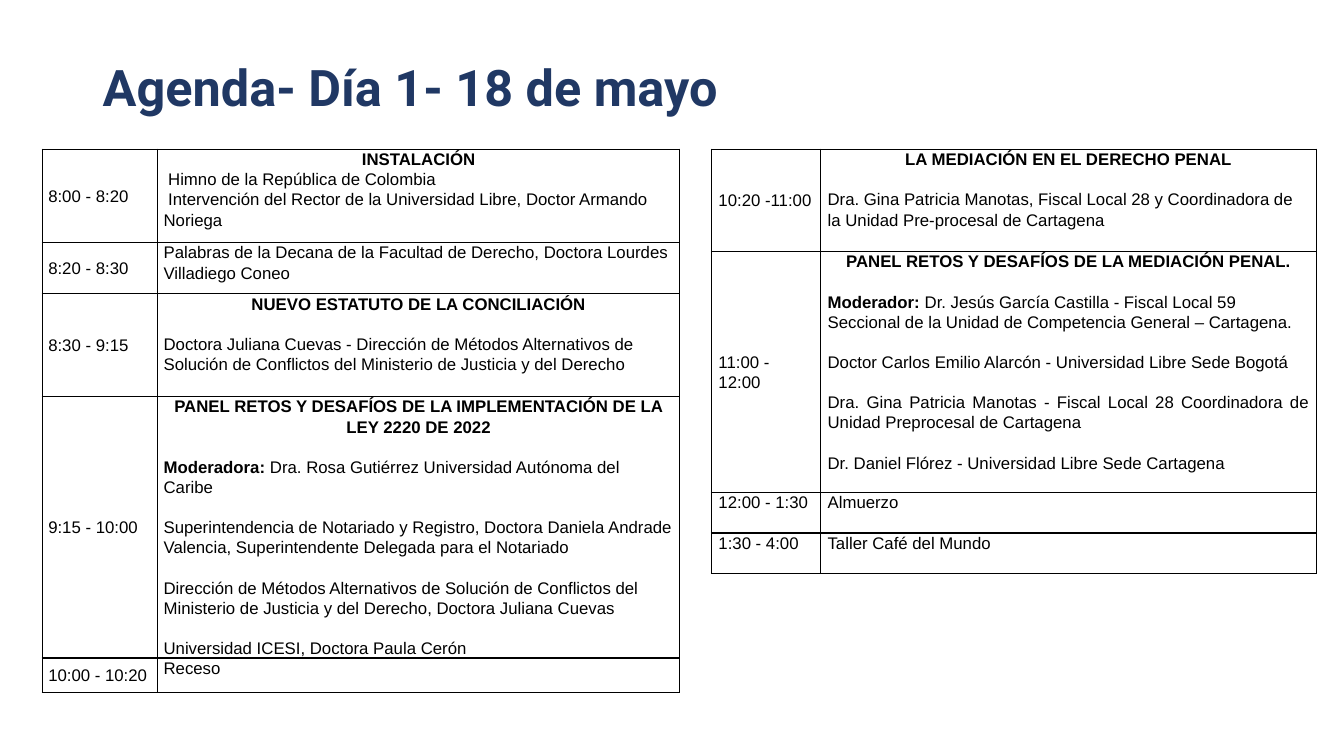
"""Build the agenda slide for day 1, with two timetables side by side."""
from lxml.etree import SubElement
from pptx import Presentation
from pptx.dml.color import RGBColor
from pptx.enum.text import MSO_AUTO_SIZE as AutoSize, MSO_ANCHOR as Anchor, PP_ALIGN as Align
from pptx.oxml.ns import qn
from pptx.util import Pt

THEME = {
    "title": {"name": "Roboto", "size": Pt(36), "bold": True, "color": RGBColor(0x20, 0x38, 0x64)},
    "body": {"name": "Arial", "size": Pt(12), "bold": False, "color": RGBColor(0, 0, 0)},
    "strong": {"name": "Arial", "size": Pt(12), "bold": True, "color": RGBColor(0, 0, 0)},
    "border": "000000",
}
LINE_GAP = Pt(14.4)
STYLES = {
    "heading": {"alignment": Align.CENTER},
    "line": {"alignment": Align.LEFT},
    "spaced": {"alignment": Align.LEFT, "space_before": LINE_GAP},
    "justified": {"alignment": Align.JUSTIFY, "space_before": LINE_GAP},
    "indented": {"alignment": Align.LEFT},
}
TABLES = [
    {
        "left": 30.2, "columns": [82.4, 373], "inset": 4.3,
        "rows": [
            (66.6, Anchor.MIDDLE, "8:00 - 8:20", [
                ("heading", "INSTALACIÓN", ""),
                ("indented", "", "Himno de la República de Colombia"),
                ("indented", "", "Intervención del Rector de la Universidad Libre, Doctor Armando Noriega"),
            ]),
            (36.8, Anchor.MIDDLE, "8:20 - 8:30", [
                ("line", "", "Palabras de la Decana de la Facultad de Derecho, Doctora Lourdes Villadiego Coneo"),
            ]),
            (73.2, Anchor.MIDDLE, "8:30 - 9:15", [
                ("heading", "NUEVO ESTATUTO DE LA CONCILIACIÓN", ""),
                ("spaced", "", "Doctora Juliana Cuevas - Dirección de Métodos Alternativos de "
                 "Solución de Conflictos del Ministerio de Justicia y del Derecho"),
            ]),
            (187, Anchor.MIDDLE, "9:15 - 10:00", [
                ("heading", "PANEL RETOS Y DESAFÍOS DE LA IMPLEMENTACIÓN DE LA LEY 2220 DE 2022", ""),
                ("spaced", "Moderadora:", " Dra. Rosa Gutiérrez Universidad Autónoma del Caribe"),
                ("spaced", "", "Superintendencia de Notariado y Registro, Doctora Daniela Andrade "
                 "Valencia, Superintendente Delegada para el Notariado"),
                ("spaced", "", "Dirección de Métodos Alternativos de Solución de Conflictos del "
                 "Ministerio de Justicia y del Derecho, Doctora Juliana Cuevas"),
                ("spaced", "", "Universidad ICESI, Doctora Paula Cerón"),
            ]),
            (24.5, Anchor.MIDDLE, "10:00 - 10:20", [("line", "", "Receso")]),
        ],
    },
    {
        "left": 508.2, "columns": [78, 354.2], "inset": 5,
        "rows": [
            (73, Anchor.MIDDLE, "10:20 -11:00", [
                ("heading", "LA MEDIACIÓN EN EL DERECHO PENAL", ""),
                ("spaced", "", "Dra. Gina Patricia Manotas, Fiscal Local 28 y Coordinadora de "
                 "la Unidad Pre-procesal de Cartagena"),
            ]),
            (172.2, Anchor.MIDDLE, "11:00 - 12:00", [
                ("heading", "PANEL RETOS Y DESAFÍOS DE LA MEDIACIÓN PENAL.", ""),
                ("spaced", "Moderador:", " Dr. Jesús García Castilla - Fiscal Local 59 "
                 "Seccional de la Unidad de Competencia General – Cartagena."),
                ("spaced", "", "Doctor Carlos Emilio Alarcón - Universidad Libre Sede Bogotá"),
                ("justified", "", "Dra. Gina Patricia Manotas - Fiscal Local 28 Coordinadora de "
                 "Unidad Preprocesal de Cartagena"),
                ("justified", "", "Dr. Daniel Flórez - Universidad Libre Sede Cartagena"),
            ]),
            (29, Anchor.TOP, "12:00 - 1:30", [("line", "", "Almuerzo")]),
            (29, Anchor.TOP, "1:30 - 4:00", [("line", "", "Taller Café del Mundo")]),
        ],
    },
]


def add_run(paragraph, text, role):
    run = paragraph.add_run()
    run.text = text
    for name, value in THEME[role].items():
        if name == "color":
            run.font.color.rgb = value
        else:
            setattr(run.font, name, value)


def fill_cell(cell, anchor, inset, lines):
    cell_format = {"vertical_anchor": anchor, "margin_left": Pt(inset), "margin_right": Pt(inset),
                   "margin_top": 0, "margin_bottom": 0}
    for name, value in cell_format.items():
        setattr(cell, name, value)
    properties = cell._tc.get_or_add_tcPr()
    for side in ("a:lnL", "a:lnR", "a:lnT", "a:lnB"):
        border = SubElement(properties, qn(side), w=str(Pt(1)))
        solid = SubElement(border, qn("a:solidFill"))
        SubElement(solid, qn("a:srgbClr"), val=THEME["border"])
    cell.fill.background()
    for index, (style, lead, text) in enumerate(lines):
        frame = cell.text_frame
        paragraph = frame.add_paragraph() if index else frame.paragraphs[0]
        paragraph.line_spacing = 1.07
        for name, value in STYLES[style].items():
            setattr(paragraph, name, value)
        if style == "indented":
            paragraph._p.get_or_add_pPr().set("indent", str(Pt(3.3)))
        for part, role in ((lead, "strong"), (text, "body")):
            if part:
                add_run(paragraph, part, role)


presentation = Presentation()
presentation.slide_width, presentation.slide_height = Pt(960), Pt(540)
slide = presentation.slides.add_slide(presentation.slide_layouts[5])

title = slide.shapes.title
title_box = {"left": Pt(66.2), "top": Pt(12.2), "width": Pt(828), "height": Pt(104.4)}
for name, value in title_box.items():
    setattr(title, name, value)
title_format = {"vertical_anchor": Anchor.MIDDLE, "word_wrap": True, "auto_size": AutoSize.NONE}
for name, value in title_format.items():
    setattr(title.text_frame, name, value)
heading = title.text_frame.paragraphs[0]
heading.alignment = Align.LEFT
heading.line_spacing = 0.9
add_run(heading, "Agenda- Día 1- 18 de mayo", "title")

for timetable in TABLES:
    rows, columns = timetable["rows"], timetable["columns"]
    total_height = sum(row[0] for row in rows)
    frame = slide.shapes.add_table(len(rows), len(columns), Pt(timetable["left"]), Pt(106.5),
                                   Pt(sum(columns)), Pt(total_height))
    table = frame.table
    table.first_row = table.horz_banding = False
    for column, width in zip(table.columns, columns):
        column.width = Pt(width)
    for index, (height, anchor, time, lines) in enumerate(rows):
        table.rows[index].height = Pt(height)
        fill_cell(table.cell(index, 0), anchor, timetable["inset"], [("line", "", time)])
        fill_cell(table.cell(index, 1), Anchor.TOP, timetable["inset"], lines)

presentation.save("out.pptx")
